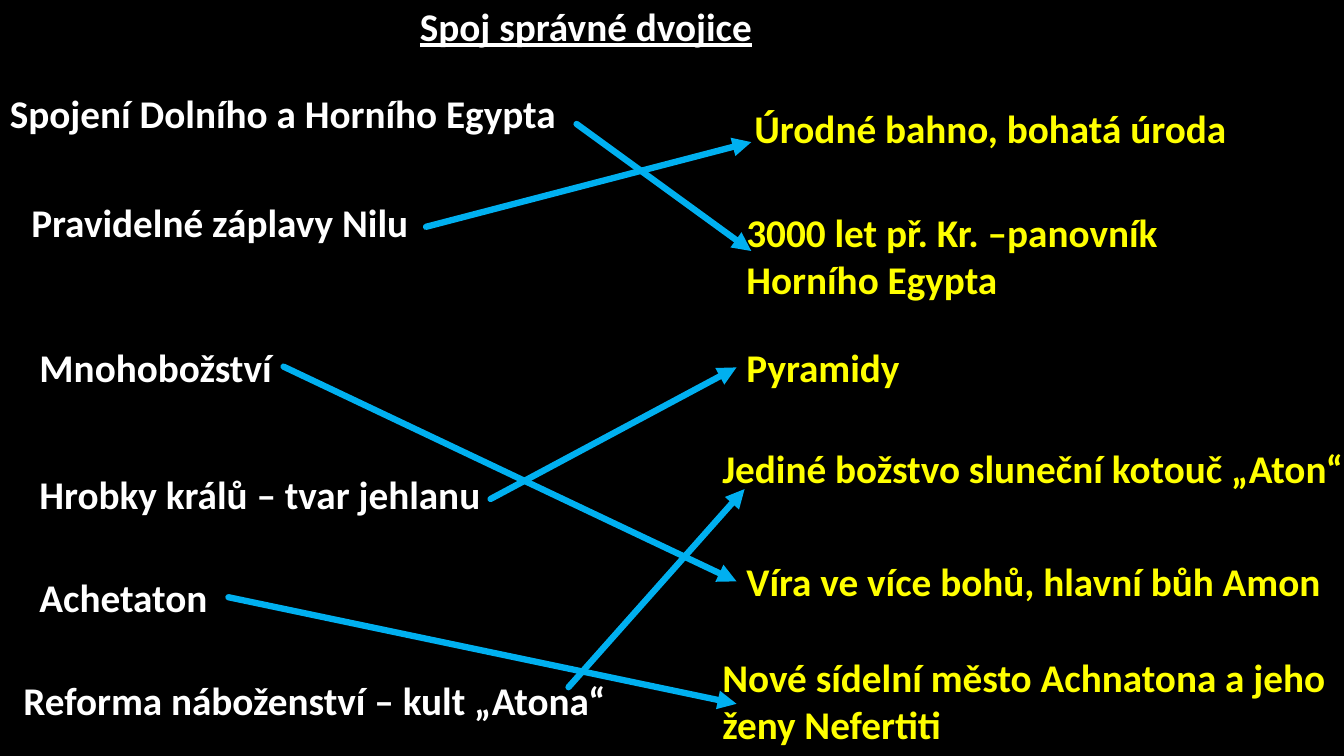
import pptx
import pptx.dml.color
import pptx.enum.shapes
import pptx.enum.text
import pptx.oxml
import pptx.oxml.ns
import pptx.util
from dataclasses import dataclass


@dataclass(frozen=True)
class Theme:
    font: str = "Calibri"
    size: int = 28
    background: str = "000000"
    term: str = "FFFFFF"
    answer: str = "FFFF00"
    arrow: str = "00B0F0"
    arrow_width: float = 4.5


THEME = Theme()
WIDTH, HEIGHT = pptx.util.Inches(13.33), pptx.util.Inches(7.5)
LINE_HEIGHT = {1: 7.6, 2: 13.9}  # box height by number of text lines
LEFT, RIGHT = 1, 3  # connection sites

# Places and lengths are percentages of the slide's width and height
# Terms: text, left, top, width
TERMS = [
    ("Spojení Dolního a Horního Egypta", 0, 11.2, 42.3),
    ("Pravidelné záplavy Nilu", 1.6, 25.6, 38.4),
    ("Mnohobožství", 2.2, 44.8, 20.1),
    ("Hrobky králů – tvar jehlanu", 2.2, 61.6, 39.6),
    ("Achetaton", 2.2, 75.2, 14.8),
    ("Reforma náboženství – kult „Atona“", 1, 88.8, 46.1),
]
# Answers: text, left, top, width, text lines
ANSWERS = [
    ("Úrodné bahno, bohatá úroda", 55.4, 13.2, 39.6, 1),
    ("3000 let př. Kr. –panovník Horního Egypta", 54.8, 26.9, 34.9, 2),
    ("Pyramidy", 54.8, 44.8, 14.8, 1),
    ("Jediné božstvo sluneční kotouč „Aton“", 53, 58.1, 48.5, 1),
    ("Víra ve více bohů, hlavní bůh Amon", 54.8, 73.1, 44.3, 1),
    ("Nové sídelní město Achnatona a jeho ženy Nefertiti", 53, 85.7, 47, 2),
]
# Matches: start, end; an index joins to that term or answer, a pair is a free point
MATCHES = [
    ((42.9, 16.4), (55.9, 33.2)),
    ((31.7, 30), (55.9, 18.8)),
    ((36.5, 66), 2),
    ((42.3, 90.9), (55.4, 64.7)),
    ((21.1, 48.5), 4),
    (4, (54.8, 93.1)),
]


def color(value):
    return pptx.dml.color.RGBColor.from_string(value)


def share_x(percent):
    return round(WIDTH * percent / 100)


def share_y(percent):
    return round(HEIGHT * percent / 100)


def add_label(slide, text, left, top, width, lines=1, fill=THEME.term, underline=None):
    sp = slide.shapes.add_textbox(share_x(left), share_y(top),
                                  share_x(width), share_y(LINE_HEIGHT[lines]))
    tf = sp.text_frame
    tf.word_wrap = True
    tf.auto_size = pptx.enum.text.MSO_AUTO_SIZE.SHAPE_TO_FIT_TEXT
    tf.text = text
    font = tf.paragraphs[0].runs[0].font
    font.name, font.size, font.bold = THEME.font, pptx.util.Pt(THEME.size), True
    font.underline = underline
    font.color.rgb = color(fill)
    return sp


def add_arrow(slide, start, end, terms, answers):
    cxn = slide.shapes.add_connector(pptx.enum.shapes.MSO_CONNECTOR.STRAIGHT, 0, 0, 0, 0)
    # Ends: joined to a label or set at a free point
    if isinstance(start, int):
        cxn.begin_connect(terms[start], RIGHT)
    else:
        cxn.begin_x, cxn.begin_y = share_x(start[0]), share_y(start[1])
    if isinstance(end, int):
        cxn.end_connect(answers[end], LEFT)
    else:
        cxn.end_x, cxn.end_y = share_x(end[0]), share_y(end[1])
    # Line with round cap and arrowhead, no shadow
    cxn.line.color.rgb = color(THEME.arrow)
    cxn.line.width = pptx.util.Pt(THEME.arrow_width)
    ln = cxn.line._get_or_add_ln()
    ln.set("cap", "rnd")
    ns = pptx.oxml.ns.nsdecls("a")
    ln.append(pptx.oxml.parse_xml(f'<a:tailEnd {ns} type="triangle"/>'))
    ln.addnext(pptx.oxml.parse_xml(f"<a:effectLst {ns}/>"))


def main():
    prs = pptx.Presentation()
    prs.slide_width, prs.slide_height = WIDTH, HEIGHT
    slide = prs.slides.add_slide(prs.slide_layouts[6])
    slide.background.fill.solid()
    slide.background.fill.fore_color.rgb = color(THEME.background)

    # Title
    add_label(slide, "Spoj správné dvojice", 30.5, -0.4, 28.5, underline=True)

    # Two columns of labels
    terms = [add_label(slide, *term) for term in TERMS]
    answers = [add_label(slide, *answer, fill=THEME.answer) for answer in ANSWERS]

    # Arrows between matching labels
    for start, end in MATCHES:
        add_arrow(slide, start, end, terms, answers)

    prs.save("out.pptx")


if __name__ == "__main__":
    main()
